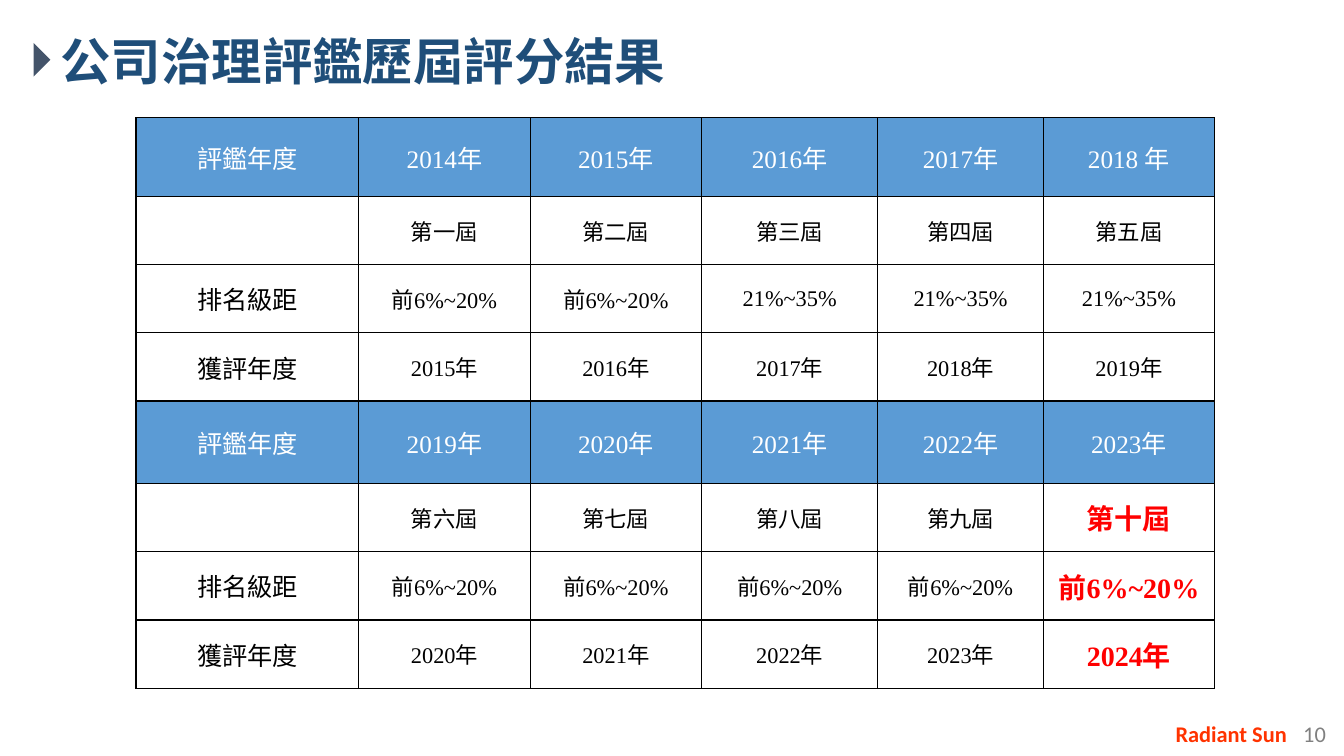
from lxml.etree import SubElement
from pptx import Presentation
from pptx.dml.color import RGBColor
from pptx.enum.shapes import MSO_SHAPE
from pptx.enum.text import MSO_ANCHOR, PP_ALIGN
from pptx.oxml.ns import qn
from pptx.util import Pt

WHITE = RGBColor(0xFF, 0xFF, 0xFF)
BLACK = RGBColor(0x00, 0x00, 0x00)
RED = RGBColor(0xFF, 0x00, 0x00)
ORANGE = RGBColor(0xFF, 0x33, 0x00)
GRAY = RGBColor(0x80, 0x80, 0x80)
NAVY = RGBColor(0x1F, 0x4E, 0x79)
SLATE = RGBColor(0x44, 0x54, 0x6A)
BLUE = RGBColor(0x5B, 0x9B, 0xD5)
CJK_FONT = "Noto Sans CJK SC"

COLUMN_WIDTHS = [159.1, 122.4, 122.4, 126, 118.1, 122.4]
HEADER_HEIGHTS = {0: 56.2, 4: 59}
ROW_HEIGHT = 48.7
TOP = "前6%~20%"
MIDDLE = "21%~35%"
RESULTS = [
    ["評鑑年度", "2014年", "2015年", "2016年", "2017年", "2018 年"],
    ["", "第一屆", "第二屆", "第三屆", "第四屆", "第五屆"],
    ["排名級距", TOP, TOP, MIDDLE, MIDDLE, MIDDLE],
    ["獲評年度", "2015年", "2016年", "2017年", "2018年", "2019年"],
    ["評鑑年度", "2019年", "2020年", "2021年", "2022年", "2023年"],
    ["", "第六屆", "第七屆", "第八屆", "第九屆", "第十屆"],
    ["排名級距", TOP, TOP, TOP, TOP, TOP],
    ["獲評年度", "2020年", "2021年", "2022年", "2023年", "2024年"],
]


def add_span(para, text, size, color, font, bold=False):
    """Add one formatted run to a paragraph."""
    span = para.add_run()
    span.text = text
    span.font.size = Pt(size)
    span.font.bold = bold
    span.font.color.rgb = color
    span.font.name = font
    SubElement(span.font._element, qn("a:ea"), typeface=CJK_FONT)


def add_heading(page, left, top, width, height):
    """Place the title and the triangle marker to its left."""
    title = page.shapes.title
    title.left, title.top = Pt(left), Pt(top)
    title.width, title.height = Pt(width), Pt(height)
    frame = title.text_frame
    frame.word_wrap = False
    frame.vertical_anchor = MSO_ANCHOR.MIDDLE
    para = frame.paragraphs[0]
    para.alignment = PP_ALIGN.LEFT
    add_span(para, "公司治理評鑑歷屆評分結果", 36, NAVY, CJK_FONT, True)
    marker = page.shapes.add_shape(
        MSO_SHAPE.ISOSCELES_TRIANGLE, Pt(left - 18), Pt(top + 19.4), Pt(24), Pt(12)
    )
    marker.rotation = 90
    marker.shadow.inherit = False
    marker.fill.solid()
    marker.fill.fore_color.rgb = SLATE
    marker.line.fill.background()


def set_borders(cell):
    """Draw a thin black line on all four sides of a cell."""
    properties = cell._tc.get_or_add_tcPr()
    for side in ("a:lnL", "a:lnR", "a:lnT", "a:lnB"):
        line = SubElement(properties, qn(side), w=str(Pt(1)))
        fill = SubElement(line, qn("a:solidFill"))
        SubElement(fill, qn("a:srgbClr"), val=str(BLACK))


def text_style(row, column):
    """Return the size, colour and weight of the text in a cell."""
    if row in HEADER_HEIGHTS:
        return 18, WHITE, False
    if column == 0:
        return 18, BLACK, False
    if row > 4 and column == 5:
        return 20, RED, True
    return 16, BLACK, False


def fill_cell(cell, text, row, column):
    """Format one table cell and write its text."""
    cell.margin_left = cell.margin_right = cell.margin_top = cell.margin_bottom = 0
    cell.vertical_anchor = MSO_ANCHOR.MIDDLE
    set_borders(cell)
    cell.fill.solid()
    cell.fill.fore_color.rgb = BLUE if row in HEADER_HEIGHTS else WHITE
    para = cell.text_frame.paragraphs[0]
    para.alignment = PP_ALIGN.CENTER
    if text:
        size, color, bold = text_style(row, column)
        add_span(para, text, size, color, "Times New Roman", bold)


def add_results(page, left, top):
    """Place the table of yearly evaluation results."""
    heights = [HEADER_HEIGHTS.get(row, ROW_HEIGHT) for row in range(len(RESULTS))]
    table = page.shapes.add_table(
        len(heights), len(COLUMN_WIDTHS),
        Pt(left), Pt(top), Pt(sum(COLUMN_WIDTHS)), Pt(sum(heights)),
    ).table
    table.first_row = table.horz_banding = False
    for column, width in enumerate(COLUMN_WIDTHS):
        table.columns[column].width = Pt(width)
    for row, texts in enumerate(RESULTS):
        table.rows[row].height = Pt(heights[row])
        for column, text in enumerate(texts):
            fill_cell(table.cell(row, column), text, row, column)


def add_footer(page, left, top, height):
    """Place the company name and the page number."""
    parts = [
        ("Radiant Sun", 0, 124.6, ORANGE, True, PP_ALIGN.CENTER),
        ("10", 106.6, 36, GRAY, False, PP_ALIGN.LEFT),
    ]
    for text, offset, width, color, bold, alignment in parts:
        box = page.shapes.add_textbox(Pt(left + offset), Pt(top), Pt(width), Pt(height))
        box.text_frame.word_wrap = True
        para = box.text_frame.paragraphs[0]
        para.alignment = alignment
        add_span(para, text, 16, color, "Calibri", bold)


def main():
    """Build the slide and save it."""
    deck = Presentation()
    deck.slide_width, deck.slide_height = Pt(960), Pt(540)
    page = deck.slides.add_slide(deck.slide_layouts[5])
    add_heading(page, 36, 17.3, 450.7, 51.1)
    add_results(page, 97.2, 84.2)
    add_footer(page, 817.2, 511.2, 26.6)
    deck.save("out.pptx")


if __name__ == "__main__":
    main()
